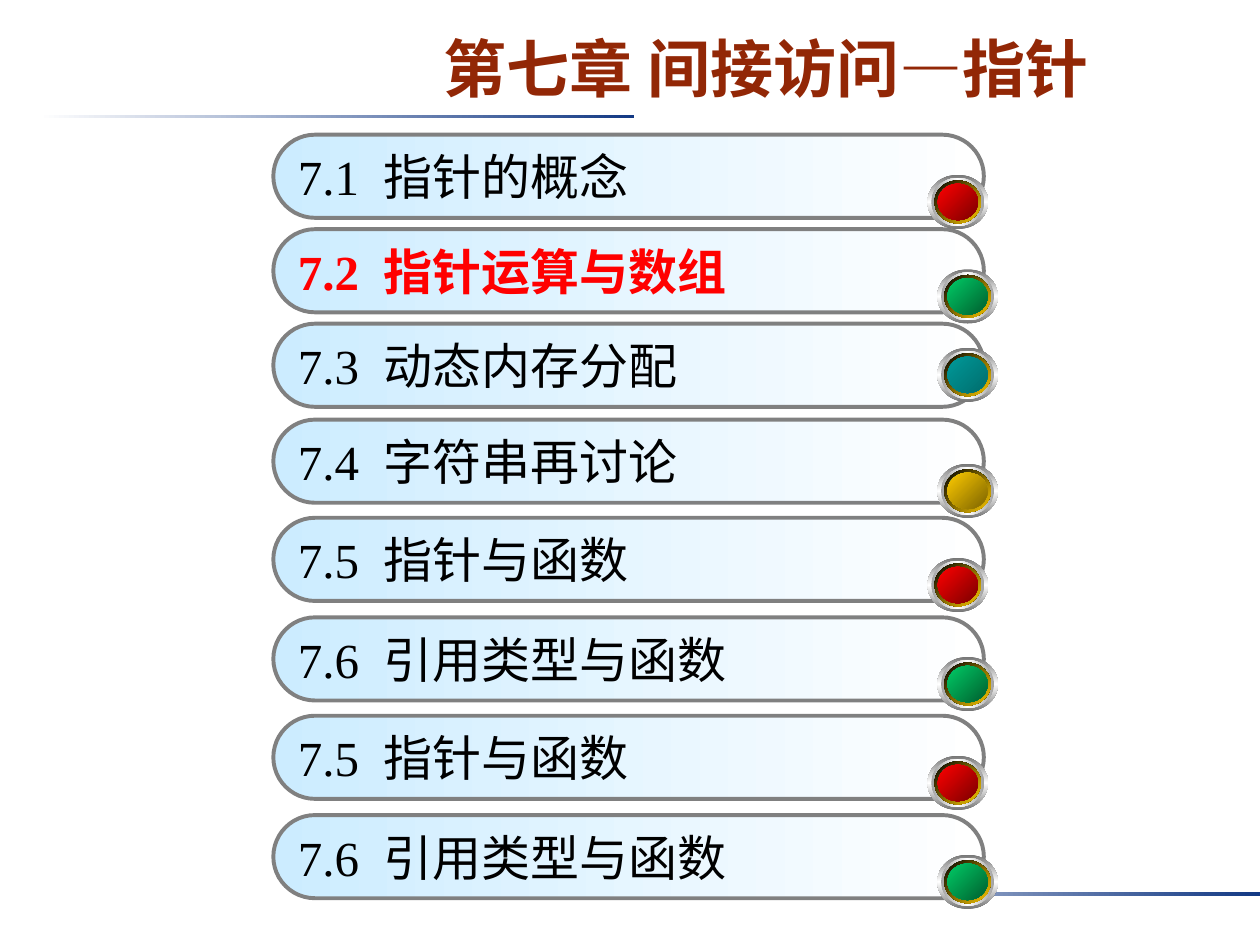
"""Build the chapter outline slide with its section bars and coloured buttons."""
from copy import deepcopy

from lxml.etree import SubElement
from pptx import Presentation
from pptx.dml.color import RGBColor
from pptx.enum.shapes import MSO_SHAPE
from pptx.enum.text import MSO_ANCHOR, MSO_AUTO_SIZE, PP_ALIGN
from pptx.oxml.ns import qn
from pptx.util import Pt

COLORS = {
    "title": "922706", "navy": "133984", "white": "FFFFFF", "black": "000000",
    "sky": "CCECFF", "border": "808080", "accent": "FF0000",
    "steel": "767676", "silver": "A2A2A2", "gold": "FFCC00", "dark_gold": "7C6300",
    "teal": "009999", "mid_teal": "007575", "dark_teal": "006D6D",
    "red": "FF0000", "dark_red": "7C0000", "green": "00CC66", "dark_green": "005E2F",
}

BAR_LEFT, BAR_W, BAR_H = 156.2, 406, 47.5
BALL_W, BALL_H = 34.6, 31

RINGS = [
    (34.6, 31, ("steel", "white", "steel"), 90),
    (30.2, 27.4, ("silver", "white", "silver"), 0),
    (26.6, 24.5, ("white", "teal", "white"), 45),
    (26.6, 24.5, ("black", "gold"), 45),
    (23, 20.9, ("mid_teal", "teal", "mid_teal"), 315),
]

SECTIONS = [
    ("7.1", "指针的概念", 77, "red", 530, 22.9),
    ("7.2", "指针运算与数组", 131, "green", 535.6, 22.9),
    ("7.3", "动态内存分配", 185, "teal", 535.6, 13.7),
    ("7.4", "字符串再讨论", 239.8, "gold", 535.6, 25.2),
    ("7.5", "指针与函数", 295.9, "red", 530, 22.9),
    ("7.6", "引用类型与函数", 352.8, "green", 535.6, 22.6),
    ("7.5", "指针与函数", 409, "red", 530, 22.9),
    ("7.6", "引用类型与函数", 465.8, "green", 535.6, 22.6),
]
CURRENT = "7.2"


class OutlineSlide:
    """Hold the slide and its style, and draw each kind of element."""

    title_font, body_font = "Arial", "Times New Roman"
    title_size, body_size = 36, 28

    def __init__(self, prs):
        self.slide = prs.slides.add_slide(prs.slide_layouts[5])

    def style_run(self, r, name, size, color, bold):
        r.font.name, r.font.size, r.font.bold = name, Pt(size), bold
        r.font.color.rgb = RGBColor.from_string(COLORS[color])

    def title(self, text, left, top, width, height):
        sp = self.slide.shapes.title
        sp.left, sp.top, sp.width, sp.height = map(Pt, (left, top, width, height))
        tf = sp.text_frame
        tf.text = text
        tf.auto_size = MSO_AUTO_SIZE.NONE
        tf.vertical_anchor = MSO_ANCHOR.BOTTOM
        tf.margin_top, tf.margin_bottom = Pt(4), Pt(3.6)
        p = tf.paragraphs[0]
        p.alignment = PP_ALIGN.CENTER
        self.style_run(p.runs[0], self.title_font, self.title_size, "title", True)

    def shape(self, shapes, kind, box, colors, angle=0):
        sp = shapes.add_shape(kind, *map(Pt, box))
        sp.shadow.inherit = False
        sp.line.fill.background()
        sp.fill.gradient()
        sp.fill.gradient_angle = (360 - angle) % 360
        stops = sp._element.spPr.find(qn("a:gradFill")).find(qn("a:gsLst"))
        for _ in colors[2:]:
            stops.append(deepcopy(stops[0]))
        for i, (stop, color) in enumerate(zip(sp.fill.gradient_stops, colors)):
            stop.position = i / (len(colors) - 1)
            stop.color.rgb = RGBColor.from_string(COLORS[color])
        return sp

    def rule(self, left, top):
        self.shape(self.slide.shapes, MSO_SHAPE.RECTANGLE, (left, top, 340, 2.2),
                   ("white", "navy"))

    def bar(self, shapes, number, name, top):
        sp = self.shape(shapes, MSO_SHAPE.ROUNDED_RECTANGLE,
                        (BAR_LEFT, top, BAR_W, BAR_H), ("sky", "white"))
        sp.adjustments[0] = 0.5
        sp.line.color.rgb = RGBColor.from_string(COLORS["border"])
        sp.line.width = Pt(2.25)
        tf = sp.text_frame
        tf.vertical_anchor = MSO_ANCHOR.MIDDLE
        p = tf.paragraphs[0]
        p.text = f"{number}\t{name}"
        p.alignment = PP_ALIGN.LEFT
        tabs = SubElement(p._p.get_or_add_pPr(), qn("a:tabLst"))
        SubElement(tabs, qn("a:tab"), pos=str(Pt(49)), algn="l")
        current = number == CURRENT
        for r in p.runs:
            self.style_run(r, self.body_font, self.body_size,
                           "accent" if current else "black", current)

    def ball(self, shapes, left, top, color):
        face = (23, 20.9, (color, f"dark_{color}"), 45)
        for w, h, colors, angle in RINGS + [face]:
            box = (left + (BALL_W - w) / 2, top + (BALL_H - h) / 2, w, h)
            self.shape(shapes, MSO_SHAPE.OVAL, box, colors, angle)

    def section(self, number, name, top, color, ball_left, ball_drop):
        shapes = self.slide.shapes.add_group_shape().shapes
        self.bar(shapes, number, name, top)
        self.ball(shapes, ball_left, top + ball_drop, color)


def main():
    prs = Presentation()
    prs.slide_width, prs.slide_height = Pt(720), Pt(540)
    s = OutlineSlide(prs)
    s.title("第七章 间接访问—指针", 172.8, 9.4, 530, 54)
    s.rule(22.3, 65.5)
    s.rule(380, 509.8)
    for section in reversed(SECTIONS):
        s.section(*section)
    prs.save("out.pptx")


if __name__ == "__main__":
    main()
